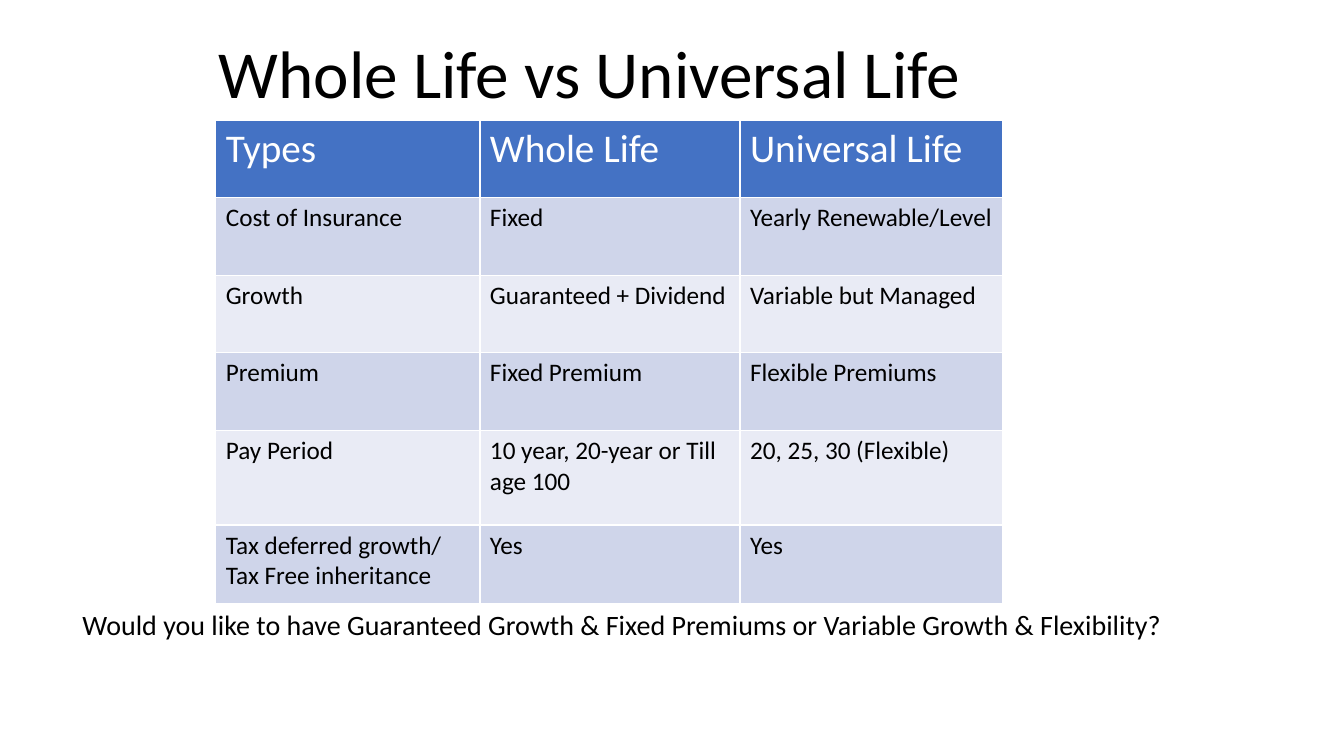
from pptx import Presentation
from pptx import util as u
from pptx.dml.color import RGBColor
from pptx.enum import text

PX = 9144
FONT = "Calibri"
BLACK, WHITE, HEADER_BLUE = "000000", "FFFFFF", "4472C4"
BANDS = ("CFD5EA", "E9EBF5")
COLUMN_WIDTHS = (262, 258, 260)
ROW_HEIGHTS = (77, 77, 77, 77, 94, 78)
COMPARISON = (
    ("Types", "Whole Life", "Universal Life"),
    ("Cost of Insurance", "Fixed", "Yearly Renewable/Level"),
    ("Growth", "Guaranteed + Dividend", "Variable but Managed"),
    ("Premium", "Fixed Premium", "Flexible Premiums"),
    ("Pay Period", "10 year, 20-year or Till age 100", "20, 25, 30 (Flexible)"),
    ("Tax deferred growth/\nTax Free inheritance", "Yes", "Yes"),
)


def px(*lengths):
    """Turn px lengths into EMU."""
    return [u.Emu(length * PX) for length in lengths]


def color(hex_string):
    """Return the colour for a hex string."""
    return RGBColor.from_string(hex_string)


def write(frame, content, size=18, ink=BLACK, line_spacing=None):
    """Fill a text frame with left-aligned formatted paragraphs."""
    frame.text = content
    frame.word_wrap = True
    for paragraph in frame.paragraphs:
        paragraph.alignment = text.PP_ALIGN.LEFT
        paragraph.line_spacing = line_spacing
        for run in paragraph.runs:
            run.font.name = FONT
            run.font.size = u.Pt(size)
            run.font.bold = False
            run.font.color.rgb = color(ink)


def place_title(slide, box):
    """Move the title placeholder into the box and write the heading."""
    title = slide.shapes.title
    title.left, title.top, title.width, title.height = px(*box)
    write(title.text_frame, "Whole Life vs Universal Life", size=48, line_spacing=0.9)
    title.text_frame.auto_size = text.MSO_AUTO_SIZE.NONE
    title.text_frame.vertical_anchor = text.MSO_ANCHOR.MIDDLE


def place_comparison(slide, left, top):
    """Build the banded comparison table from its top left corner."""
    box = px(left, top, sum(COLUMN_WIDTHS), sum(ROW_HEIGHTS))
    table = slide.shapes.add_table(len(ROW_HEIGHTS), len(COLUMN_WIDTHS), *box).table
    for column, width in zip(table.columns, px(*COLUMN_WIDTHS)):
        column.width = width
    for row, height in zip(table.rows, px(*ROW_HEIGHTS)):
        row.height = height
    for row_index, entries in enumerate(COMPARISON):
        is_header = row_index == 0
        for column_index, entry in enumerate(entries):
            cell = table.cell(row_index, column_index)
            cell.fill.solid()
            cell.fill.fore_color.rgb = color(
                HEADER_BLUE if is_header else BANDS[(row_index - 1) % 2])
            write(cell.text_frame, entry, size=28 if is_header else 18,
                  ink=WHITE if is_header else BLACK)


def place_question(slide, box):
    """Add the closing question in the box."""
    question = slide.shapes.add_textbox(*px(*box))
    write(question.text_frame,
          "Would you like to have Guaranteed Growth & Fixed Premiums "
          "or Variable Growth & Flexibility?", size=20)
    question.text_frame.auto_size = text.MSO_AUTO_SIZE.SHAPE_TO_FIT_TEXT


def main():
    """Build and save the presentation."""
    presentation = Presentation()
    presentation.slide_width, presentation.slide_height = px(1333, 750)
    slide = presentation.slides.add_slide(presentation.slide_layouts.get_by_name("Title Only"))
    place_title(slide, (207, 47, 962, 59))
    place_comparison(slide, 214, 119)
    place_question(slide, (72, 598, 1130, 44))
    presentation.save("out.pptx")


if __name__ == "__main__":
    main()
